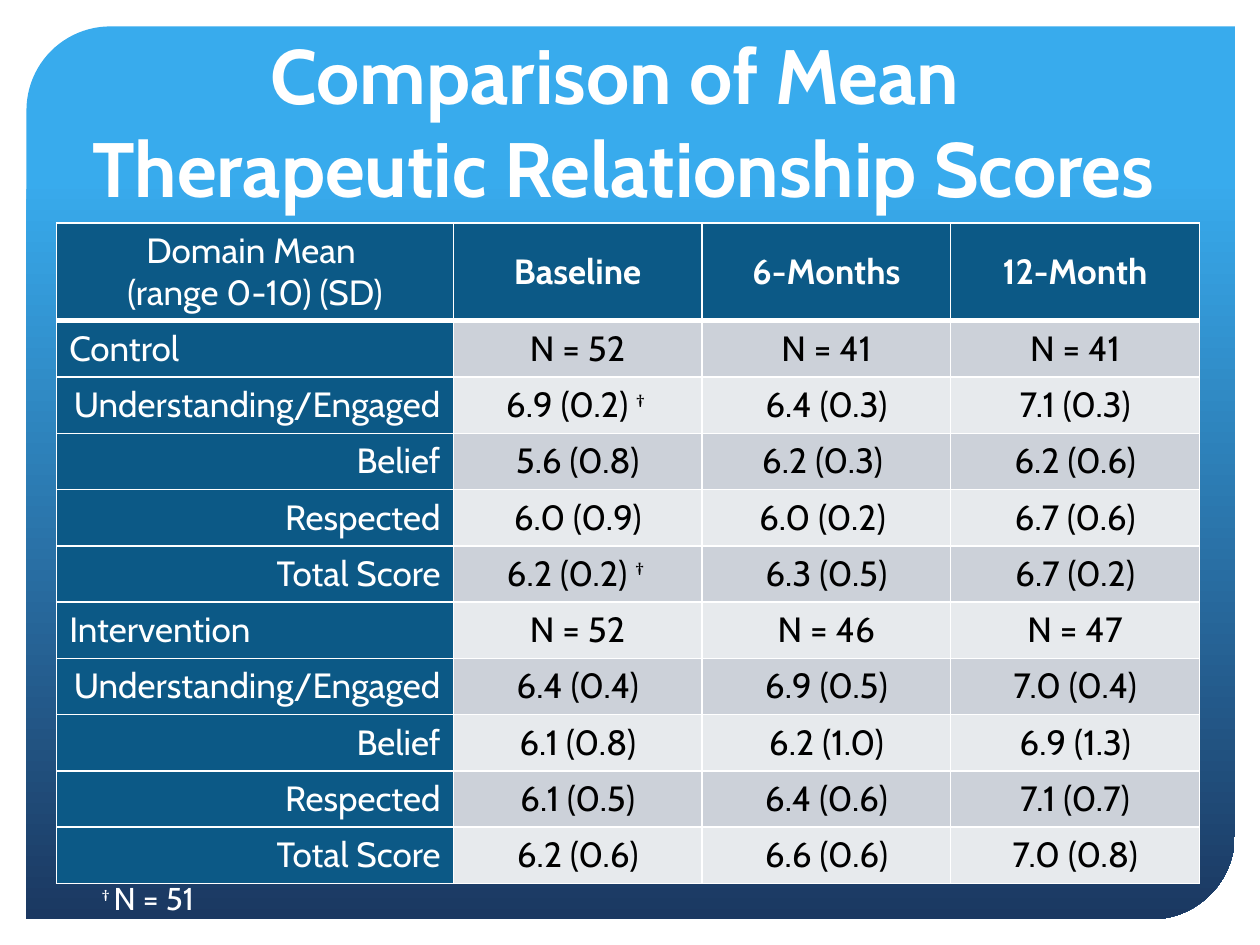
from dataclasses import dataclass

from lxml.etree import SubElement
from pptx import Presentation
from pptx.dml.color import RGBColor as Color
from pptx.enum.shapes import MSO_SHAPE as Preset
from pptx.enum.text import MSO_ANCHOR as Anchor, PP_ALIGN as Align
from pptx.oxml.ns import qn
from pptx.util import Inches, Pt


@dataclass(frozen=True)
class Theme:
    font: str = "Cabin"
    white: str = "FFFFFF"
    black: str = "000000"
    sky: str = "38ABED"
    navy: str = "1B3861"
    header: str = "0C5986"
    bands: tuple = ("E7EAED", "CCD1D9")
    title_size: int = 44
    table_size: int = 20
    note_size: int = 18
    line: int = 1
    heavy_line: int = 3


@dataclass(frozen=True)
class Box:
    left: int
    top: int
    width: int
    height: int

    def region(self, left, top, width, height):
        """Return a box given as shares of this one."""
        return Box(int(self.left + left * self.width), int(self.top + top * self.height),
                   int(width * self.width), int(height * self.height))

    @property
    def frame(self):
        return self.left, self.top, self.width, self.height


THEME = Theme()
DAGGER = "†"
TITLE = ("Comparison of Mean ", "Therapeutic Relationship Scores ")
CORNER = ("Domain Mean ", "(range 0-10) (SD)")
VISITS = ("Baseline", "6-Months", "12-Month")
SCORES = (
    ("Control", "N = 52", "N = 41", "N = 41"),
    ("Understanding/Engaged ", "6.9 (0.2) † ", "6.4 (0.3)", "7.1 (0.3)"),
    (" Belief", "5.6 (0.8)", "6.2 (0.3) ", "6.2 (0.6)"),
    ("Respected", "6.0 (0.9)", "6.0 (0.2) ", "6.7 (0.6)"),
    ("Total Score", "6.2 (0.2) † ", "6.3 (0.5)", "6.7 (0.2)"),
    ("Intervention", "N = 52", "N = 46", "N = 47"),
    ("Understanding/Engaged ", "6.4 (0.4)", "6.9 (0.5)", "7.0 (0.4)"),
    (" Belief", "6.1 (0.8)", "6.2 (1.0)", "6.9 (1.3)"),
    ("Respected", "6.1 (0.5)", "6.4 (0.6)", "7.1 (0.7)"),
    ("Total Score", "6.2 (0.6)", "6.6 (0.6)", "7.0 (0.8)"),
)
GROUPS = ("Control", "Intervention")


def add_run(paragraph, text, size, color, bold=False, raised=False):
    run = paragraph.add_run()
    run.text = text
    font = run.font
    font.name, font.size, font.bold = THEME.font, Pt(size), bold
    font.color.rgb = Color.from_string(color)
    if raised:
        run._r.get_or_add_rPr().set("baseline", "30000")


def add_marked_text(paragraph, text, size, color, bold=False):
    """Add text, raising the dagger that marks a smaller sample."""
    before, *after = text.split(DAGGER)
    if before:
        add_run(paragraph, before, size, color, bold)
    for rest in after:
        add_run(paragraph, DAGGER + " ", size, color, bold, raised=True)
        if rest.strip():
            add_run(paragraph, rest.strip(), size, color, bold)


def add_text_box(slide, box):
    text_frame = slide.shapes.add_textbox(*box.frame).text_frame
    text_frame.word_wrap = True
    return text_frame.paragraphs[0]


def add_backdrop(slide, box):
    panel = slide.shapes.add_shape(Preset.ROUND_2_DIAG_RECTANGLE, *box.frame)
    panel.shadow.inherit = False
    panel.adjustments[0], panel.adjustments[1] = 0.094, 0
    panel.line.fill.background()
    panel.fill.gradient()
    panel.fill.gradient_angle = 270
    stops = ((0.17, THEME.sky), (1, THEME.navy))
    for stop, (position, color) in zip(panel.fill.gradient_stops, stops):
        stop.position = position
        stop.color.rgb = Color.from_string(color)


def add_title(slide, box):
    paragraph = add_text_box(slide, box)
    paragraph.alignment = Align.CENTER
    first, second = TITLE
    add_run(paragraph, first, THEME.title_size, THEME.white, bold=True)
    paragraph.add_line_break()
    add_run(paragraph, second, THEME.title_size, THEME.white, bold=True)


def style_cell(cell, fill, top, bottom):
    """Draw the four borders, then the fill."""
    properties = cell._tc.get_or_add_tcPr()
    widths = {"a:lnL": THEME.line, "a:lnR": THEME.line, "a:lnT": top, "a:lnB": bottom}
    for tag, width in widths.items():
        line = SubElement(properties, qn(tag), w=str(Pt(width)))
        SubElement(SubElement(line, qn("a:solidFill")), qn("a:srgbClr"), val=THEME.white)
    cell.fill.solid()
    cell.fill.fore_color.rgb = Color.from_string(fill)


def fill_cell(cell, lines, alignment, color, bold=False):
    cell.vertical_anchor = Anchor.MIDDLE
    text_frame = cell.text_frame
    for index, text in enumerate(lines):
        paragraph = text_frame.add_paragraph() if index else text_frame.paragraphs[0]
        paragraph.alignment = alignment
        add_marked_text(paragraph, text, THEME.table_size, color, bold)


def add_score_table(slide, box):
    row_count, column_count = len(SCORES) + 1, len(VISITS) + 1
    table = slide.shapes.add_table(row_count, column_count, *box.frame).table

    # Wide label column and tall header; the rest share what is left
    label_width, header_height = int(box.width * 0.347), int(box.height * 0.148)
    for index, column in enumerate(table.columns):
        column.width = (box.width - label_width) // len(VISITS) if index else label_width
    for index, row in enumerate(table.rows):
        row.height = (box.height - header_height) // len(SCORES) if index else header_height

    # Header row
    for index, lines in enumerate((CORNER, *((visit,) for visit in VISITS))):
        cell = table.cell(0, index)
        fill_cell(cell, lines, Align.CENTER, THEME.white, bold=index > 0)
        style_cell(cell, THEME.header, THEME.line, THEME.heavy_line)
    table.cell(0, 0).vertical_anchor = Anchor.TOP

    # Labels and scores
    for row_index, (label, *scores) in enumerate(SCORES, start=1):
        top = THEME.heavy_line if row_index == 1 else THEME.line
        label_cell = table.cell(row_index, 0)
        alignment = Align.LEFT if label in GROUPS else Align.RIGHT
        fill_cell(label_cell, (label,), alignment, THEME.white)
        style_cell(label_cell, THEME.header, top, THEME.line)
        for column_index, score in enumerate(scores, start=1):
            cell = table.cell(row_index, column_index)
            fill_cell(cell, (score,), Align.CENTER, THEME.black)
            style_cell(cell, THEME.bands[row_index % 2], top, THEME.line)


def add_footnote(slide, box):
    add_marked_text(add_text_box(slide, box), "† N = 51", THEME.note_size, THEME.white)


def main():
    presentation = Presentation()
    presentation.slide_width, presentation.slide_height = Inches(10), Inches(7.5)
    slide = presentation.slides.add_slide(presentation.slide_layouts[6])
    page = Box(0, 0, presentation.slide_width, presentation.slide_height)

    add_backdrop(slide, page.region(0.021, 0.028, 0.959, 0.945))
    add_title(slide, page.region(0.059, 0.023, 0.872, 0.152))
    add_score_table(slide, page.region(0.045, 0.236, 0.907, 0.699))
    add_footnote(slide, page.region(0.071, 0.924, 0.129, 0.053))

    presentation.save("out.pptx")


if __name__ == "__main__":
    main()
